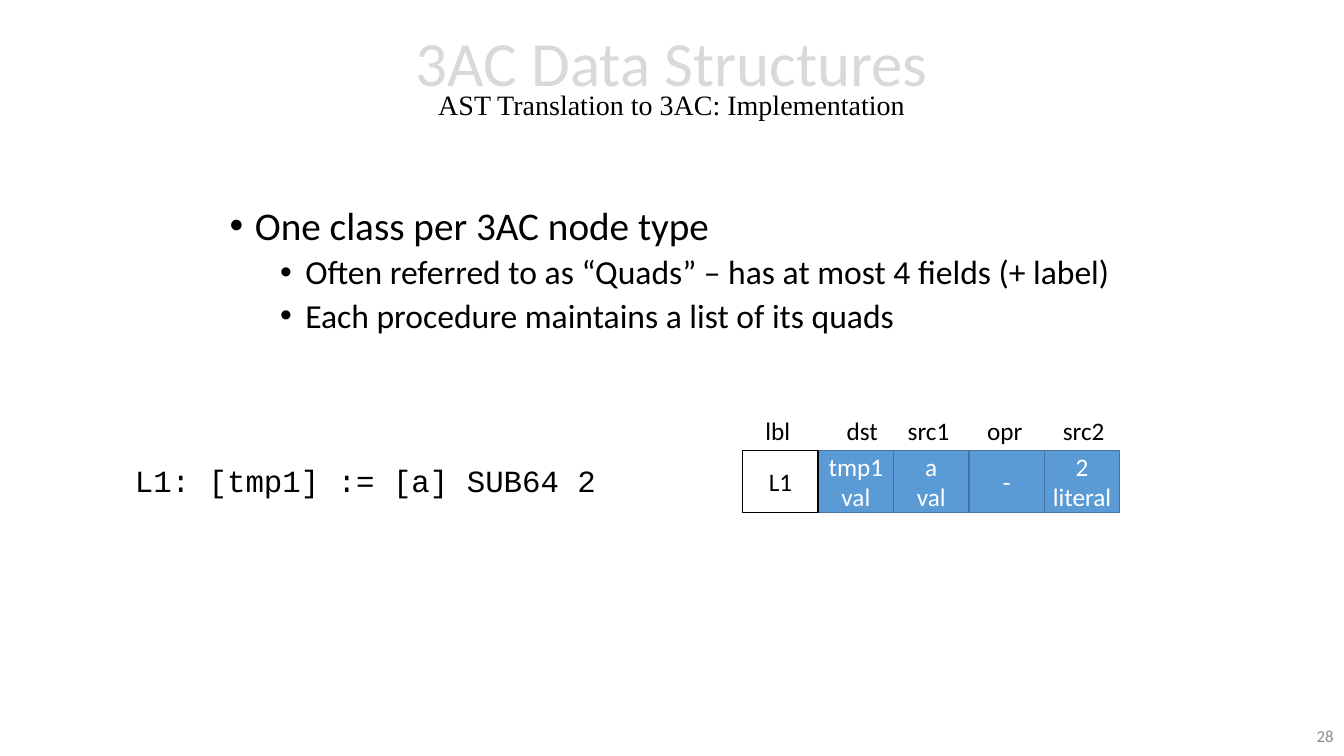
"""Build the slide on 3AC data structures: quads and their fields."""
from lxml.etree import SubElement
from pptx import Presentation
from pptx.dml.color import RGBColor
from pptx.enum.shapes import MSO_SHAPE as Shape
from pptx.enum.text import MSO_ANCHOR as Anchor, PP_ALIGN as Align
from pptx.oxml.ns import qn
from pptx.util import Cm, Pt

BLACK = RGBColor(0x00, 0x00, 0x00)
WHITE = RGBColor(0xFF, 0xFF, 0xFF)
PALE = RGBColor(0xD9, 0xD9, 0xD9)
GREY = RGBColor(0x8C, 0x8C, 0x8C)
BLUE = RGBColor(0x5B, 0x9B, 0xD5)
NAVY = RGBColor(0x43, 0x73, 0x9E)


def style(run, size, color=BLACK, font="Calibri"):
    """Set the size, colour and font of a run."""
    run.font.size = Pt(size)
    run.font.color.rgb = color
    run.font.name = font


def add_text(text, left, top, width, height, anchor=Anchor.TOP, align=Align.LEFT):
    """Add a wrapping text box and return its text frame."""
    frame = slide.shapes.add_textbox(Cm(left), Cm(top), Cm(width), Cm(height)).text_frame
    frame.word_wrap = True
    frame.vertical_anchor = anchor
    frame.text = text
    for paragraph in frame.paragraphs:
        paragraph.alignment = align
    return frame


deck = Presentation()
deck.slide_width, deck.slide_height = Cm(33.87), Cm(19.05)
slide = deck.slides.add_slide(deck.slide_layouts[6])

title = add_text("", 4.23, 0.23, 25.4, 3.68, Anchor.MIDDLE, Align.CENTER).paragraphs[0]
title.text = "3AC Data Structures\vAST Translation to 3AC: Implementation"
title.line_spacing = 0.7
heading, subheading = title.runs
style(heading, 45, PALE)
style(subheading, 20, font="Times New Roman")

POINTS = [
    (0, "One class per 3AC node type"),
    (1, "Often referred to as “Quads” – has at most 4 fields (+ label)"),
    (1, "Each procedure maintains a list of its quads"),
]
body = add_text("\n".join(text for _, text in POINTS), 5.54, 5.08, 23.11, 5.08)
for point, (level, _) in zip(body.paragraphs, POINTS):
    point.level = level
    point.line_spacing = 0.9
    point.space_before = Pt(5 if level else 10)
    style(point.runs[0], 24 if level else 28)
    properties = point._p.get_or_add_pPr()
    properties.set("marL", str(Cm(0.635 + 1.27 * level)))
    properties.set("indent", str(-Cm(0.635)))
    SubElement(properties, qn("a:buFont"), typeface="Arial")
    SubElement(properties, qn("a:buChar"), char="•")

CELL_WIDTH, CELL_HEIGHT = 1.9, 1.55
QUAD_LEFT, QUAD_TOP = 18.72, 11.36
FIELDS = [
    ("lbl", 19.6, "L1"),
    ("dst", 21.73, "tmp1\nval"),
    ("src1", 23.4, "a\nval"),
    ("opr", 25.32, "-"),
    ("src2", 27.31, "2\nliteral"),
]
for column, (field, center, value) in reversed(list(enumerate(FIELDS))):
    is_label = field == "lbl"
    cell = slide.shapes.add_shape(
        Shape.RECTANGLE, Cm(QUAD_LEFT + column * CELL_WIDTH), Cm(QUAD_TOP),
        Cm(CELL_WIDTH), Cm(CELL_HEIGHT))
    cell.shadow.inherit = False
    cell.fill.solid()
    cell.fill.fore_color.rgb = WHITE if is_label else BLUE
    cell.line.color.rgb = BLACK if is_label else NAVY
    cell.line.width = Pt(1)
    content = cell.text_frame
    content.margin_left = content.margin_right = 0
    content.vertical_anchor = Anchor.MIDDLE
    content.text = value
    for line in content.paragraphs:
        line.alignment = Align.CENTER
        style(line.runs[0], 18, BLACK if is_label else WHITE)

    caption = add_text(field, center - CELL_WIDTH / 2, 10.33, CELL_WIDTH, 1.02,
                       align=Align.CENTER)
    style(caption.paragraphs[0].runs[0], 18)

code = add_text("L1: [tmp1] := [a] SUB64 2", 3.15, 11.5, 12.5, 1.19)
style(code.paragraphs[0].runs[0], 22, font="Courier New")

page_number = add_text("28", 26.24, 18.03, 7.62, 1.02, Anchor.MIDDLE, Align.RIGHT)
style(page_number.paragraphs[0].runs[0], 12, GREY)

deck.save("out.pptx")
